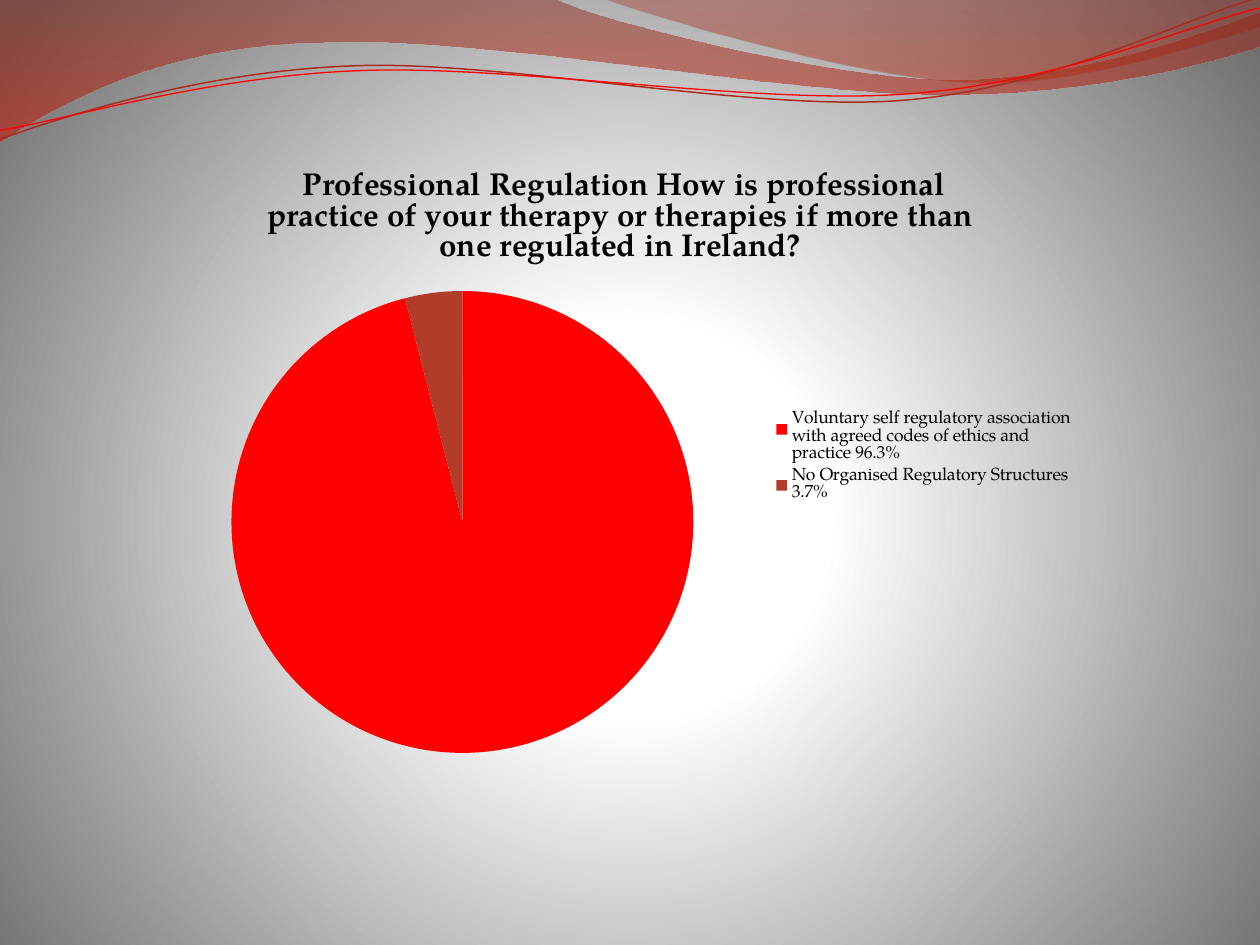
from lxml.etree import SubElement
from pptx import Presentation
from pptx.chart.data import CategoryChartData
from pptx.dml.color import RGBColor
from pptx.enum.chart import XL_CHART_TYPE, XL_LEGEND_POSITION
from pptx.oxml import parse_xml
from pptx.oxml.ns import nsdecls, qn
from pptx.util import Cm, Pt

FONT = "TeX Gyre Pagella"
COLORS = {
    "white": "FFFFFF", "grey": "707070", "black": "000000",
    "red": "FF0000", "brick": "B13C29", "rust": "AB2B1E",
    "band_top": "8D2514", "band_end": "CF1300",
    "crest_top": "A11607", "crest_end": "B4240C",
}
QUESTION = (" Professional Regulation How is professional practice of your therapy "
            "or therapies if more than one regulated in Ireland?")
ANSWERS = [
    ("Voluntary self regulatory association with agreed codes of ethics and practice 96.3%",
     96, "red"),
    ("No Organised Regulatory Structures 3.7%", 4, "brick"),
]
BAND = [(0, -1), (440, -1), (476, 17, 664, 63, 758, 63), (853, 63, 958, 26, 1000, 9),
        (1001, 36), (983, 44, 870, 76, 746, 75), (622, 75, 382, 28, 257, 34),
        (129, 35, 46, 83, -1, 113), (0, -1)]
CREST = [(479, -1), (509, 11, 682, 62, 769, 65), (856, 69, 961, 32, 1000, 21),
         (1000, 0), (479, -1)]
RUST_LINE = [(-2, 87), (47, 72, 158, 41, 278, 42), (396, 42, 591, 93, 712, 90),
             (832, 87, 939, 36, 1000, 22)]
RED_LINE = [(-2, 80), (46, 75, 164, 45, 283, 46), (403, 46, 596, 88, 716, 85),
            (835, 83, 942, 42, 1001, 30)]
LINE_ANGLE = -2.7


def rgb(name):
    """Return the named colour."""
    return RGBColor.from_string(COLORS[name])


def set_gradient(fill, parent, stops, direction):
    """Give a fill (position, colour, opacity) stops in percent and a direction."""
    fill.gradient()
    gs = "".join(
        f'<a:gs pos="{pos * 1000}"><a:srgbClr val="{COLORS[name]}">'
        f'<a:alpha val="{alpha * 1000}"/></a:srgbClr></a:gs>'
        for pos, name, alpha in stops)
    gradient = parse_xml(f'<a:gradFill {nsdecls("a")} rotWithShape="1">'
                         f'<a:gsLst>{gs}</a:gsLst>{direction}</a:gradFill>')
    parent.replace(parent.find(qn("a:gradFill")), gradient)


def draw_background(slide):
    """Fill the slide with a white glow that fades to grey."""
    fill = slide.background.fill
    fill.solid()
    stops = [(0, "white", 100), (25, "white", 100), (100, "grey", 100)]
    direction = ('<a:path path="circle"><a:fillToRect l="10000" t="110000" '
                 'r="10000" b="100000"/></a:path>')
    bg_pr = slide.background._cSld.find(qn("p:bg")).find(qn("p:bgPr"))
    set_gradient(fill, bg_pr, stops, direction)


def add_curve(shapes, segments, left, top, width, close):
    """Add an outline of lines and cubic curves in thousandths of the width."""
    points = [seg[i:i + 2] for seg in segments for i in range(0, len(seg), 2)]
    builder = shapes.build_freeform(*points[0], scale=width / 1000)
    builder.add_line_segments(points[1:], close=close)
    sp = builder.convert_to_shape(left, top)
    sp.shadow.inherit = False
    lines = iter(list(sp._element.iter(qn("a:lnTo"))))
    for seg in segments[1:]:
        line = next(lines)
        if len(seg) == 6:
            line.addprevious(parse_xml(f'<a:cubicBezTo {nsdecls("a")}/>'))
            curve = line.getprevious()
            for node in (line, next(lines), next(lines)):
                curve.append(node[0])
                node.getparent().remove(node)
    return sp


def draw_waves(slide, left, top, width):
    """Draw the translucent waves and the two thin lines across the top."""
    waves = [
        (BAND, [(0, "band_top", 45), (100, "band_end", 55)]),
        (CREST, [(0, "crest_top", 30), (80, "crest_end", 45)]),
    ]
    for segments, stops in waves:
        sp = add_curve(slide.shapes, segments, left, top, width, True)
        set_gradient(sp.fill, sp._element.spPr, stops, '<a:lin ang="5400000" scaled="0"/>')
        sp.line.fill.background()
    group = slide.shapes.add_group_shape()
    for segments, color, weight in [(RUST_LINE, "rust", 0.85), (RED_LINE, "red", 0.75)]:
        sp = add_curve(group.shapes, segments, left, top, width, False)
        sp.rotation = LINE_ANGLE
        sp.fill.background()
        sp.line.color.rgb = rgb(color)
        sp.line.width = Pt(weight)


def set_font(font, size, bold):
    """Apply the slide's typeface in black."""
    font.name = FONT
    font.size = Pt(size)
    font.bold = bold
    font.color.rgb = rgb("black")


def place_plot(chart, x, y, w, h):
    """Fix the plot's inner area in percent of the chart."""
    plot_area = chart._chartSpace.chart.plotArea
    layout = plot_area.find(qn("c:layout"))
    if layout is None:
        layout = SubElement(plot_area, qn("c:layout"))
        plot_area.insert(0, layout)
    manual = SubElement(layout, qn("c:manualLayout"))
    values = [("layoutTarget", "inner"), ("xMode", "edge"), ("yMode", "edge"),
              ("x", x / 100), ("y", y / 100), ("w", w / 100), ("h", h / 100)]
    for tag, value in values:
        SubElement(manual, qn(f"c:{tag}")).set("val", str(value))


def draw_pie(slide, left, top, width, height):
    """Draw the pie of answers with its title and legend."""
    data = CategoryChartData()
    data.categories = [label for label, _, _ in ANSWERS]
    data.add_series(QUESTION, [value for _, value, _ in ANSWERS])
    chart = slide.shapes.add_chart(XL_CHART_TYPE.PIE, left, top, width, height, data).chart
    set_font(chart.font, 10, False)
    chart.has_title = True
    p = chart.chart_title.text_frame.paragraphs[0]
    r = p.add_run()
    r.text = QUESTION
    set_font(r.font, 18, True)
    chart.has_legend = True
    chart.legend.position = XL_LEGEND_POSITION.RIGHT
    chart.legend.include_in_layout = False
    set_font(chart.legend.font, 10, False)
    plot = chart.plots[0]
    plot.vary_by_categories = True
    for i, (_, _, color) in enumerate(ANSWERS):
        fill = plot.series[0].points[i].format.fill
        fill.solid()
        fill.fore_color.rgb = rgb(color)
    place_plot(chart, 8.3, 23.4, 49.6, 73.9)


def main():
    """Build and save the slide."""
    prs = Presentation()
    prs.slide_width, prs.slide_height = Cm(25.4), Cm(19.05)
    slide = prs.slides.add_slide(prs.slide_layouts[6])
    draw_background(slide)
    draw_waves(slide, Cm(0), Cm(0), prs.slide_width)
    draw_pie(slide, Cm(3.1), Cm(2.92), Cm(18.8), Cm(12.6))
    prs.save("out.pptx")


if __name__ == "__main__":
    main()
